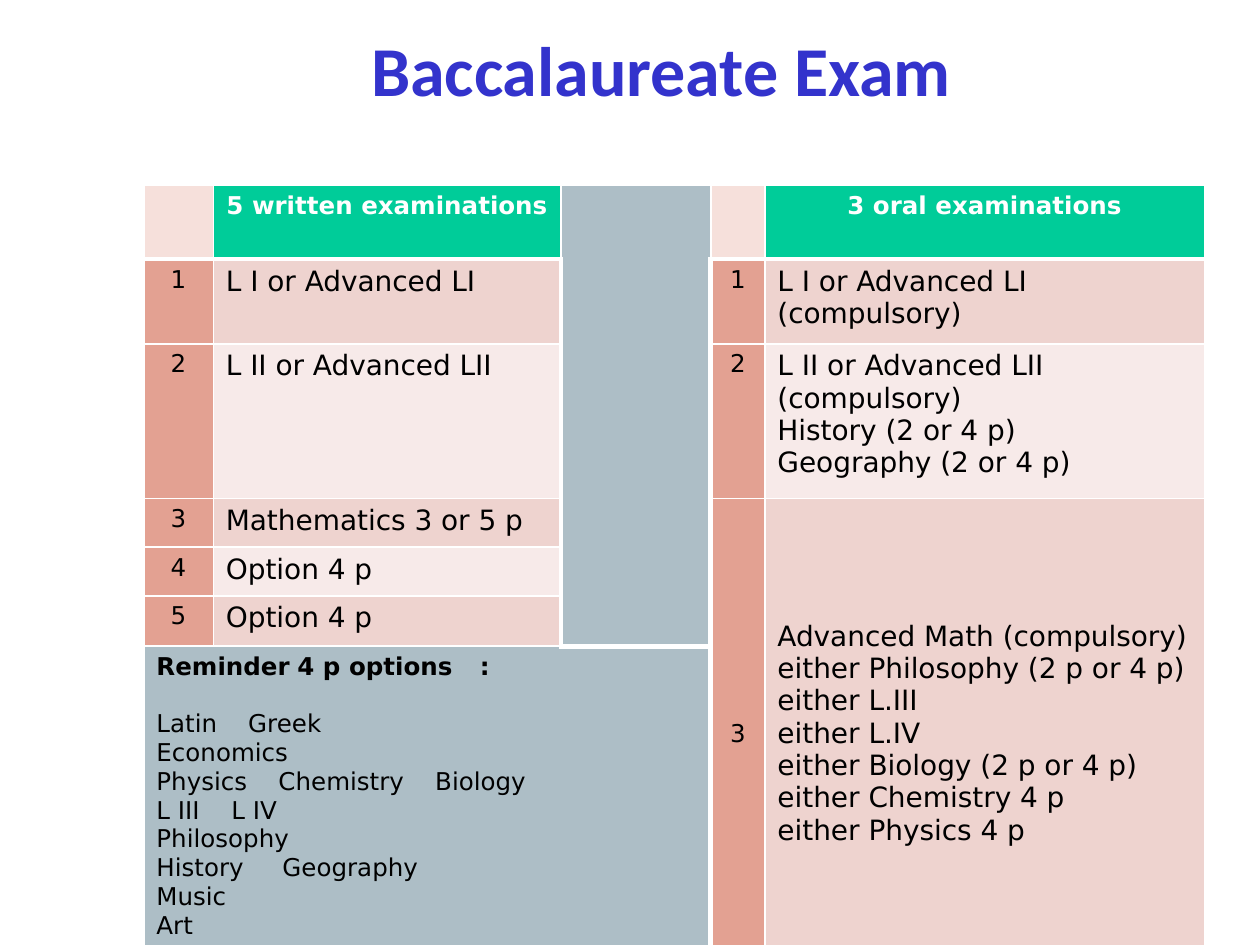
from lxml import etree
from pptx import Presentation
from pptx import util as u
from pptx.dml.color import RGBColor
from pptx.enum import text
from pptx.oxml import ns

INK = {"title": "3333CC", "text": "000000", "white": "FFFFFF", "head": "00CC99",
       "pale": "F6E0DB", "num": "E3A192", "odd": "EED3CF", "even": "F7EAE9",
       "gray": "ADBEC6"}
MID = text.PP_ALIGN.CENTER


def write(para, words, size, tint="text", bold=False, align=None, font="DejaVu Sans"):
    para.alignment = align
    run = para.add_run()
    run.text = words
    run.font.name = font
    run.font.size = u.Pt(size)
    run.font.bold = bold
    run.font.color.rgb = RGBColor.from_string(INK[tint])


def style(cell, fill, thick=""):
    props = cell._tc.get_or_add_tcPr()
    for side in "LRTB":
        width = u.Pt(3 if side in thick else 1)
        line = etree.SubElement(props, ns.qn(f"a:ln{side}"), w=str(width))
        solid = etree.SubElement(line, ns.qn("a:solidFill"))
        etree.SubElement(solid, ns.qn("a:srgbClr"), val=INK["white"])
    cell.fill.solid()
    cell.fill.fore_color.rgb = RGBColor.from_string(INK[fill])


deck = Presentation()
deck.slide_width, deck.slide_height = u.Cm(25.4), u.Cm(19.05)
slide = deck.slides.add_slide(deck.slide_layouts[6])

box = slide.shapes.add_textbox(u.Cm(2.69), u.Cm(0.53), u.Cm(21.59), u.Cm(3.4))
frame = box.text_frame
frame.word_wrap = True
frame.margin_top = 0
write(frame.paragraphs[0], "Baccalaureate Exam ", 40, "title", True, MID, "Calibri")

cols = [1.4, 7.01, 3.02, 1.09, 8.86]
rows = [1.49, 1.71, 3.12, 0.98, 0.98, 0.98, 6.5]
table = slide.shapes.add_table(len(rows), len(cols), u.Cm(2.9), u.Cm(3.73),
                               u.Cm(sum(cols)), u.Cm(sum(rows))).table
table.first_row = table.horz_banding = False
for col, wide in zip(table.columns, cols):
    col.width = u.Cm(wide)
for row, high in zip(table.rows, rows):
    row.height = u.Cm(high)
for top, left, end, right in [(0, 2, 5, 2), (3, 3, 6, 3), (3, 4, 6, 4), (6, 0, 6, 2)]:
    table.cell(top, left).merge(table.cell(end, right))

heads = ["5 written examinations", "3 oral examinations"]
written = [["L I or Advanced LI"], ["L II or Advanced LII"], ["Mathematics 3 or 5 p"],
           ["Option 4 p"], ["Option 4 p"]]
oral = [["L I or Advanced LI (compulsory)"],
        ["L II or Advanced LII (compulsory)", "History (2 or 4 p)", "Geography (2 or 4 p)"],
        ["Advanced Math (compulsory)", "either Philosophy (2 p or 4 p)", "either L.III",
         "either L.IV", "either Biology (2 p or 4 p)", "either Chemistry 4 p",
         "either Physics 4 p"]]

for left, head, exams, side in zip((0, 3), heads, (written, oral), "RL"):
    style(table.cell(0, left), "pale", "B")
    cell = table.cell(0, left + 1)
    style(cell, "head", "B")
    write(cell.text_frame.paragraphs[0], head, 14, "white", True, MID)
    for num, lines in enumerate(exams, 1):
        edge = "T" if num == 1 else ""
        label, cell = table.cell(num, left), table.cell(num, left + 1)
        style(label, "num", edge + ("L" if side == "L" else ""))
        style(cell, "odd" if num % 2 else "even", edge + ("R" if side == "R" else ""))
        write(label.text_frame.paragraphs[0], str(num), 14, align=MID)
        for spot, words in enumerate(lines):
            frame = cell.text_frame
            write(frame.add_paragraph() if spot else frame.paragraphs[0], words, 16)
        if cell.is_merge_origin:
            label.vertical_anchor = cell.vertical_anchor = text.MSO_ANCHOR.MIDDLE

style(table.cell(0, 2), "gray", "B")
note = table.cell(6, 0)
style(note, "gray")
options = [("Reminder\t4 p options\t:", [2.84, 6.52]), ("Latin\tGreek", [1.85]),
           ("Economics", []), ("Physics\tChemistry\tBiology", [2.46, 5.62]),
           ("L III\tL IV", [1.51]), ("Philosophy", []), ("History\tGeography", [2.54]),
           ("Music", []), ("Art", [])]
for spot, (words, stops) in enumerate(options):
    frame = note.text_frame
    para = frame.add_paragraph() if spot else frame.paragraphs[0]
    if stops:
        tabs = etree.SubElement(para._p.get_or_add_pPr(), ns.qn("a:tabLst"))
        for stop in stops:
            etree.SubElement(tabs, ns.qn("a:tab"), pos=str(u.Cm(stop)), algn="l")
    if spot == 1:
        para.space_before = u.Pt(16.3)
    write(para, words, 14, bold=spot == 0)

deck.save("out.pptx")
